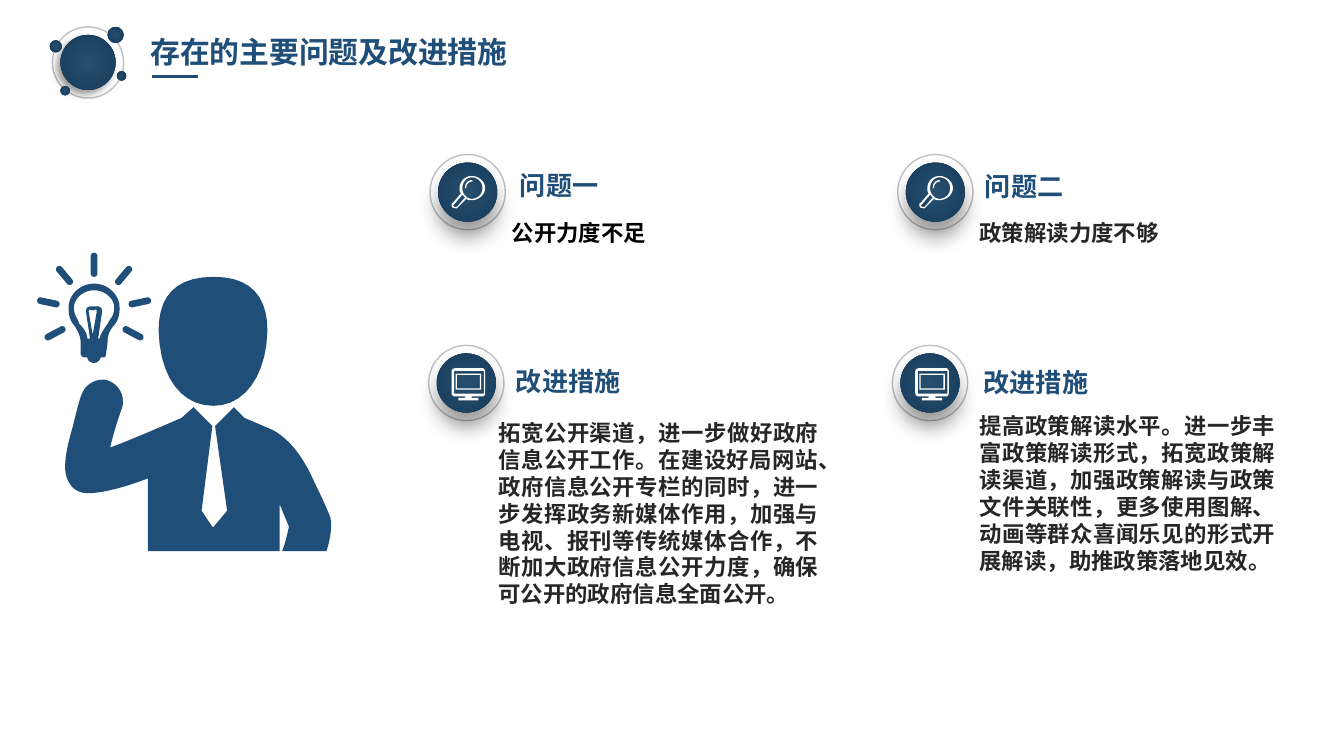
from math import cos, sin, pi, radians

from lxml import etree
from pptx import Presentation
from pptx.dml.color import RGBColor
from pptx.enum.shapes import MSO_CONNECTOR, MSO_SHAPE
from pptx.enum.text import MSO_AUTO_SIZE, PP_ALIGN
from pptx.oxml.ns import qn
from pptx.util import Inches, Pt

OVAL = MSO_SHAPE.OVAL
STRAIGHT = MSO_CONNECTOR.STRAIGHT
GROW = MSO_AUTO_SIZE.SHAPE_TO_FIT_TEXT
JUSTIFY = PP_ALIGN.JUSTIFY

NAVY, DARK, BLACK, WHITE = "1F4E79", "262626", "000000", "FFFFFF"
GREY, CORE, EDGE = "BFBFBF", "27506E", "173A5B"

# In an outline, a pair is a corner and six numbers are a Bezier curve.
BODY = [
    (.8, 2.83), (.89, 2.86, .93, 2.95, .91, 3.03), (.87, 3.14, .84, 3.24, .82, 3.33),
    (.96, 3.28, 1.35, 3.11, 1.35, 3.11), (1.44, 3.03), (1.58, 3.17), (1.5, 3.8),
    (1.58, 3.92), (1.59, 3.92), (1.69, 3.8), (1.6, 3.17), (1.74, 3.03), (1.82, 3.11),
    (2.03, 3.2), (2.14, 3.26, 2.25, 3.38, 2.34, 3.59),
    (2.41, 3.73, 2.46, 3.85, 2.46, 3.86), (2.47, 3.92, 2.46, 4, 2.43, 4.1),
    (2.1, 4.1), (2.13, 4.02, 2.14, 3.96, 2.15, 3.92), (2.08, 3.75), (2.08, 4.1),
    (1.1, 4.1), (1.1, 3.56), (.92, 3.63, .75, 3.67, .66, 3.67),
    (.6, 3.67, .55, 3.65, .52, 3.6), (.47, 3.53, .47, 3.42, .54, 3.18),
    (.57, 3.06, .6, 2.94, .61, 2.93), (.64, 2.85, .73, 2.81, .8, 2.83)]
HEAD = [
    (1.59, 2.06), (1.87, 2.06, 1.99, 2.21, 1.99, 2.46), (1.98, 2.81, 1.81, 3.02, 1.59, 3.02),
    (1.35, 3.02, 1.19, 2.81, 1.18, 2.46), (1.18, 2.21, 1.3, 2.06, 1.59, 2.06)]
BULB = [
    (.7, 2.11), (.8, 2.11, .89, 2.19, .89, 2.29), (.89, 2.36, .87, 2.4, .84, 2.43),
    (.81, 2.47, .8, 2.5, .8, 2.55), (.79, 2.63), (.79, 2.65, .78, 2.66, .77, 2.66),
    (.75, 2.66), (.74, 2.68, .73, 2.7, .7, 2.7), (.67, 2.7, .65, 2.68, .65, 2.66),
    (.63, 2.66), (.62, 2.66, .6, 2.65, .6, 2.63), (.6, 2.55),
    (.6, 2.5, .58, 2.47, .56, 2.43), (.53, 2.4, .51, 2.36, .51, 2.29),
    (.51, 2.19, .6, 2.11, .7, 2.11)]
GLASS = [
    (.7, 2.16), (.62, 2.16, .55, 2.22, .55, 2.29), (.55, 2.35, .58, 2.37, .59, 2.41),
    (.62, 2.44, .65, 2.48, .65, 2.52), (.67, 2.52), (.64, 2.32),
    (.64, 2.27, .68, 2.28, .7, 2.28), (.72, 2.28, .76, 2.27, .76, 2.32), (.73, 2.52),
    (.74, 2.52), (.75, 2.48, .78, 2.44, .8, 2.41), (.82, 2.37, .85, 2.35, .85, 2.29),
    (.85, 2.22, .78, 2.16, .7, 2.16)]
WIRE = [
    (.66, 2.32), (.69, 2.49), (.72, 2.32), (.72, 2.29, .7, 2.31, .69, 2.31),
    (.68, 2.31, .66, 2.29, .66, 2.32)]

# Icon outlines are measured from the top left of their badge.
LENS = [
    (.31, .16), (.26, .16, .22, .2, .22, .25), (.22, .26, .22, .28, .23, .29), (.17, .36),
    (.16, .36, .16, .37, .16, .38), (.16, .39, .17, .4, .19, .4), (.2, .4), (.27, .33),
    (.28, .34, .3, .34, .31, .34), (.36, .34, .41, .3, .41, .25),
    (.41, .2, .36, .16, .31, .16)]
HOLE = [
    (.31, .17), (.36, .17, .39, .21, .39, .25), (.39, .29, .36, .33, .31, .33),
    (.27, .33, .24, .29, .24, .25), (.24, .21, .27, .17, .31, .17)]
GRIP = [(.2, .39), (.18, .39), (.17, .38), (.18, .37), (.24, .3), (.26, .32)]
GLINT = [
    (.31, .19), (.28, .19, .26, .22, .26, .25), (.27, .25), (.27, .22, .29, .2, .32, .2)]
CASE = [
    (.4, .17), (.2, .17), (.18, .17, .17, .18, .17, .2), (.17, .35),
    (.17, .37, .18, .38, .2, .38), (.27, .38), (.27, .39), (.22, .39), (.22, .41),
    (.37, .41), (.37, .39), (.32, .39), (.32, .38), (.4, .38),
    (.41, .38, .42, .37, .42, .35), (.42, .2), (.42, .18, .41, .17, .4, .17)]


def box(x, y, w, h):
    return [(x, y), (x + w, y), (x + w, y + h), (x, y + h)]


FIND = [[LENS, HOLE, GRIP], [GLINT]]
SCREEN = [[box(.2, .21, .19, .12), box(.21, .22, .17, .1)],
          [CASE, box(.19, .19, .22, .17)]]


def color(code):
    return RGBColor.from_string(code)


def ray(x, y, size, turn, wide=.05):
    """Outline of a round-ended bar about a centre, turned clockwise."""
    turn, rad, pts = radians(turn), wide / 2, []
    for side in (1, -1):
        mid = side * (size / 2 - rad)
        for step in range(9):
            ang = turn + pi * (step / 8 - side / 2)
            pts.append((x + mid * cos(turn) + rad * cos(ang),
                        y + mid * sin(turn) + rad * sin(ang)))
    return pts


def flatten(line, steps=10):
    """Turn the curves of an outline into short straight pieces."""
    pts = [line[0]]
    for part in line[1:]:
        if len(part) == 2:
            pts.append(part)
            continue
        knots = [pts[-1], part[:2], part[2:4], part[4:]]
        for step in range(1, steps + 1):
            t = step / steps
            rates = ((1 - t) ** 3, 3 * t * (1 - t) ** 2, 3 * t * t * (1 - t), t ** 3)
            pts.append(tuple(sum(r * k[i] for r, k in zip(rates, knots))
                             for i in (0, 1)))
    return pts


def free(shapes, lines, fill, x=0, y=0):
    pen = None
    for line in lines:
        pts = [(Inches(x + a), Inches(y + b)) for a, b in flatten(line)]
        if pen is None:
            pen = shapes.build_freeform(*pts[0], scale=1.0)
        else:
            pen.move_to(*pts[0])
        pen.add_line_segments(pts[1:], close=True)
    shape = pen.convert_to_shape()
    shape.shadow.inherit = False
    shape.fill.solid()
    shape.fill.fore_color.rgb = color(fill)
    shape.line.fill.background()


def disc(shapes, x, y, size):
    shape = shapes.add_shape(OVAL, Inches(x), Inches(y), Inches(size), Inches(size))
    shape.shadow.inherit = False
    return shape


def ring(shapes, x, y, size):
    shape = disc(shapes, x, y, size)
    shape.fill.background()
    shape.line.color.rgb = color(GREY)
    shape.line.width = Pt(.75)


def ball(shapes, x, y, size, shade=None):
    """Disc with a radial gradient; shade is blur, distance and angle."""
    shape = disc(shapes, x, y, size)
    shape.line.fill.background()
    shape.fill.gradient()
    for stop, code, place in zip(shape.fill.gradient_stops, (CORE, EDGE), (0, 1)):
        stop.color.rgb, stop.position = color(code), place
    props = shape._element.spPr
    grad = props.find(qn("a:gradFill"))
    grad.remove(grad.find(qn("a:lin")))
    way = etree.SubElement(grad, qn("a:path"), path="circle")
    etree.SubElement(way, qn("a:fillToRect"), dict.fromkeys("ltrb", "50000"))
    if shade:
        blur, dist, turn = shade
        cast = etree.SubElement(
            props.find(qn("a:effectLst")), qn("a:outerShdw"), blurRad=str(Pt(blur)),
            dist=str(Pt(dist)), dir=str(turn * 60000), algn="ctr", rotWithShape="0")
        tint = etree.SubElement(cast, qn("a:srgbClr"), val=BLACK)
        etree.SubElement(tint, qn("a:alpha"), val="40000")


def badge(shapes, x, y, icon):
    group = shapes.add_group_shape().shapes
    ring(group, x, y, .56)
    ball(group, x + .06, y + .06, .44, (11, 8, 90))
    for lines in icon:
        free(group, lines, WHITE, x, y)


def text(shapes, x, y, w, h, words, size=12, ink=DARK, align=None, wrap=True):
    frame = shapes.add_textbox(Inches(x), Inches(y), Inches(w), Inches(h)).text_frame
    frame.word_wrap = wrap
    frame.auto_size = GROW
    para = frame.paragraphs[0]
    para.alignment = align
    run = para.add_run()
    run.text = words
    run.font.name, run.font.size, run.font.bold = "Arial", Pt(size), True
    run.font.color.rgb = color(ink)


def header(shapes):
    group = shapes.add_group_shape().shapes
    ring(group, .39, .2, .53)
    ball(group, .45, .26, .41, (4, 3, 135))
    for x, y, size in ((.8, .2, .12), (.37, .3, .09), (.45, .64, .07), (.87, .53, .07)):
        ball(group, x, y, size)
    text(shapes, 1.02, .2, 2.87, .37, "存在的主要问题及改进措施", 16, NAVY, wrap=False)
    rule = shapes.add_connector(STRAIGHT, Inches(1.13), Inches(.57), Inches(1.47), Inches(.57))
    rule.line.color.rgb = color(NAVY)
    rule.line.width = Pt(1.5)
    etree.SubElement(rule._element.spPr, qn("a:effectLst"))


def thinker(shapes):
    rays = [ray(.7, 1.97, .18, 90)]
    for side in (1, -1):
        for dx, y, size, turn in ((.22, 2.05, .17, -50), (.34, 2.25, .17, -12),
                                  (.29, 2.48, .17, 28)):
            rays.append(ray(.7 + side * dx, y, size, side * turn))
    free(shapes, [BODY, HEAD, BULB, GLASS, WIRE] + rays, NAVY)


def main():
    deck = Presentation()
    deck.slide_width = Inches(10)
    deck.slide_height = deck.slide_width * 9 // 16
    shapes = deck.slides.add_slide(deck.slide_layouts[6]).shapes
    header(shapes)
    thinker(shapes)
    for x, y, words in ((3.77, 1.21, "问题一"), (7.23, 1.22, "问题二"),
                        (3.74, 2.67, "改进措施"), (7.22, 2.68, "改进措施")):
        text(shapes, x, y, 1.9, .34, words, 14, NAVY)
    text(shapes, 3.71, 1.58, 1.97, .3, "公开力度不足", ink=BLACK)
    text(shapes, 7.19, 1.58, 1.97, .3, "政策解读力度不够")
    text(shapes, 3.61, 3.07, 2.58, 1.51,
         "拓宽公开渠道，进一步做好政府信息公开工作。在建设好局网站、政府信息公开专栏的同时，"
         "进一步发挥政务新媒体作用，加强与电视、报刊等传统媒体合作，不断加大政府信息公开力度，"
         "确保可公开的政府信息全面公开。", align=JUSTIFY)
    text(shapes, 7.19, 3.02, 2.4, 1.31,
         "提高政策解读水平。进一步丰富政策解读形式，拓宽政策解读渠道，加强政策解读与政策文件关联性，"
         "更多使用图解、动画等群众喜闻乐见的形式开展解读，助推政策落地见效。", align=JUSTIFY)
    for x, y, icon in ((3.2, 1.15, FIND), (6.68, 1.15, FIND),
                       (3.19, 2.57, SCREEN), (6.64, 2.57, SCREEN)):
        badge(shapes, x, y, icon)
    deck.save("out.pptx")


if __name__ == "__main__":
    main()
